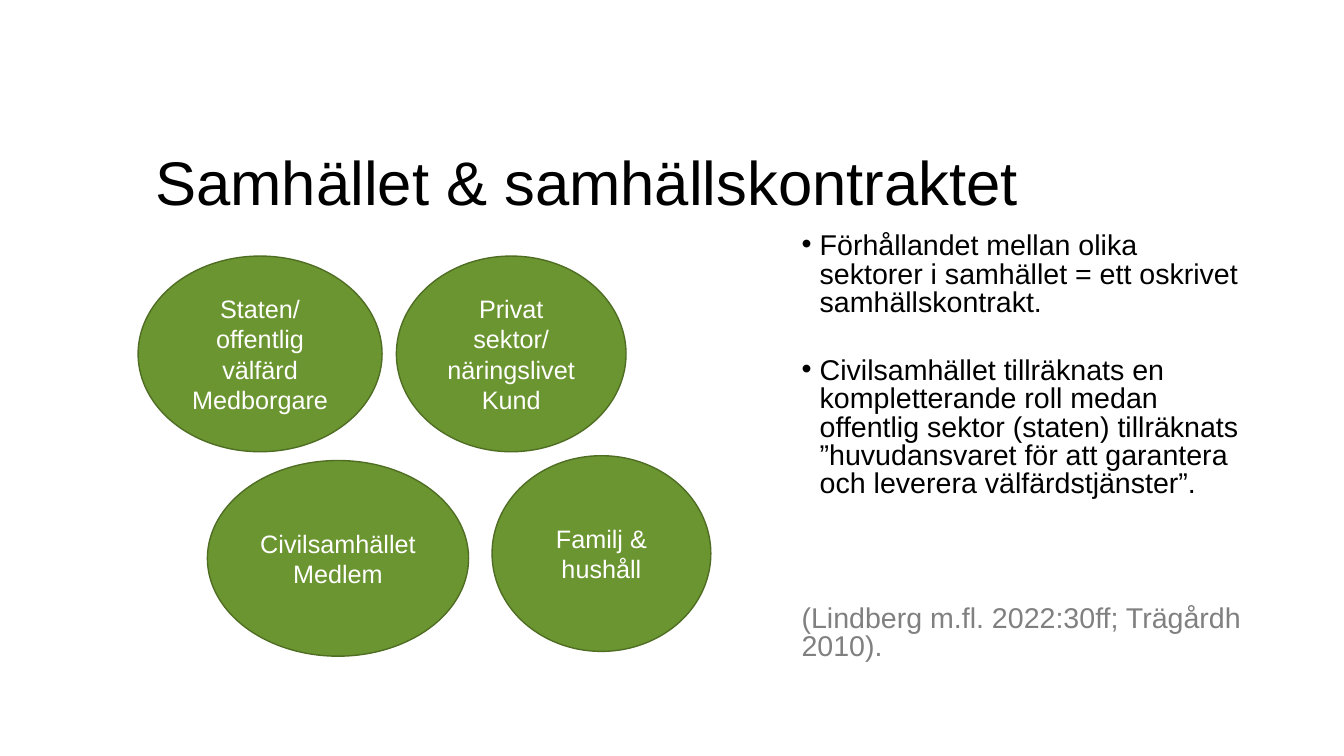
from dataclasses import dataclass

from lxml import etree
from pptx import Presentation
from pptx import util as u
from pptx.dml.color import RGBColor
from pptx.enum import shapes, text
from pptx.oxml.ns import qn


@dataclass(frozen=True)
class Theme:
    """Colours, font and type sizes."""
    font: str = "Arial"
    ink: str = "000000"
    muted: str = "808080"
    light: str = "FFFFFF"
    fill: str = "6B9530"
    edge: str = "4F6E24"
    title: float = 44
    body: float = 20.4
    label: float = 18


THEME = Theme()
WIDE, HIGH = 13.33, 7.5
LEFT, CENTER = text.PP_ALIGN.LEFT, text.PP_ALIGN.CENTER
HEAD = (1.44, 1.11, 10.97, 1.37)
LIST = (7.85, 2.26, 4.58, 4.24)
FIELD = (1.37, 2.54, 5.68, 3.97)
LINE, GAP = 0.83, 28
CITE_GAP = 75.6
OVAL_ROWS = 48.9
SECTORS = [
    (12.1, 51.1, 45.6, ["Civilsamhället", "Medlem"]),
    (0, 0, 42.6, ["Staten/ offentlig välfärd", "Medborgare"]),
    (45.1, 0, 40.1, ["Privat sektor/ näringslivet", "Kund"]),
    (61.8, 49.9, 38.2, ["Familj & hushåll"]),
]
POINTS = [
    "Förhållandet mellan olika sektorer i samhället = ett oskrivet samhällskontrakt.",
    "Civilsamhället tillräknats en kompletterande roll medan offentlig sektor "
    "(staten) tillräknats ”huvudansvaret för att garantera och leverera "
    "välfärdstjänster”.",
]
CITE = "(Lindberg m.fl. 2022:30ff; Trägårdh 2010)."


def place(shape, box):
    """Move and size a shape to a box in inches."""
    shape.left, shape.top, shape.width, shape.height = map(u.Inches, box)


def mark(para, sign):
    """Set a hanging bullet, or none when sign is empty."""
    props = para._p.get_or_add_pPr()
    hang = u.Inches(0.18) if sign else 0
    props.set("marL", str(hang))
    props.set("indent", str(-hang))
    if sign:
        etree.SubElement(props, qn("a:buChar")).set("char", sign)
    else:
        etree.SubElement(props, qn("a:buNone"))


def write(para, words, size, color, align=LEFT, line=1.0, before=0, sign=None):
    """Put formatted text in a paragraph."""
    para.text = words
    para.alignment = align
    para.line_spacing = line
    para.space_before = u.Pt(before)
    if sign is not None:
        mark(para, sign)
    para.font.name = THEME.font
    para.font.size = u.Pt(size)
    para.font.color.rgb = RGBColor.from_string(color)


def setup(frame, anchor, count=1):
    """Prepare a text frame and return its paragraphs."""
    frame.word_wrap = True
    frame.auto_size = text.MSO_AUTO_SIZE.NONE
    frame.vertical_anchor = anchor
    for _ in range(count - 1):
        frame.add_paragraph()
    return frame.paragraphs


def heading(slide, box):
    """Fill the title placeholder."""
    shape = slide.shapes.title
    place(shape, box)
    para, = setup(shape.text_frame, text.MSO_ANCHOR.MIDDLE)
    write(para, "Samhället & samhällskontraktet", THEME.title, THEME.ink)


def points(slide, box):
    """Fill the body placeholder with bullets and a citation."""
    shape = slide.placeholders[1]
    place(shape, box)
    *items, cite = setup(shape.text_frame, text.MSO_ANCHOR.TOP, len(POINTS) + 1)
    for i, (para, words) in enumerate(zip(items, POINTS)):
        write(para, words, THEME.body, THEME.ink, line=LINE,
              before=GAP if i else 0, sign="•")
    write(cite, CITE, THEME.body, THEME.muted, line=LINE, before=CITE_GAP, sign="")


def sectors(slide, box):
    """Draw the sector ovals on a grid of 100 columns and rows."""
    left, top, wide, high = box
    col, row = wide / 100, high / 100
    for x, y, cols, lines in SECTORS:
        oval = slide.shapes.add_shape(shapes.MSO_SHAPE.OVAL, 0, 0, 0, 0)
        place(oval, (left + x * col, top + y * row, cols * col, OVAL_ROWS * row))
        oval.shadow.inherit = False
        oval.fill.solid()
        oval.fill.fore_color.rgb = RGBColor.from_string(THEME.fill)
        oval.line.color.rgb = RGBColor.from_string(THEME.edge)
        oval.line.width = u.Pt(1)
        paras = setup(oval.text_frame, text.MSO_ANCHOR.MIDDLE, len(lines))
        for para, words in zip(paras, lines):
            write(para, words, THEME.label, THEME.light, align=CENTER)


def main():
    """Build and save the slide."""
    deck = Presentation()
    deck.slide_width, deck.slide_height = u.Inches(WIDE), u.Inches(HIGH)
    slide = deck.slides.add_slide(deck.slide_layouts[1])
    heading(slide, HEAD)
    points(slide, LIST)
    sectors(slide, FIELD)
    deck.save("out.pptx")


if __name__ == "__main__":
    main()
